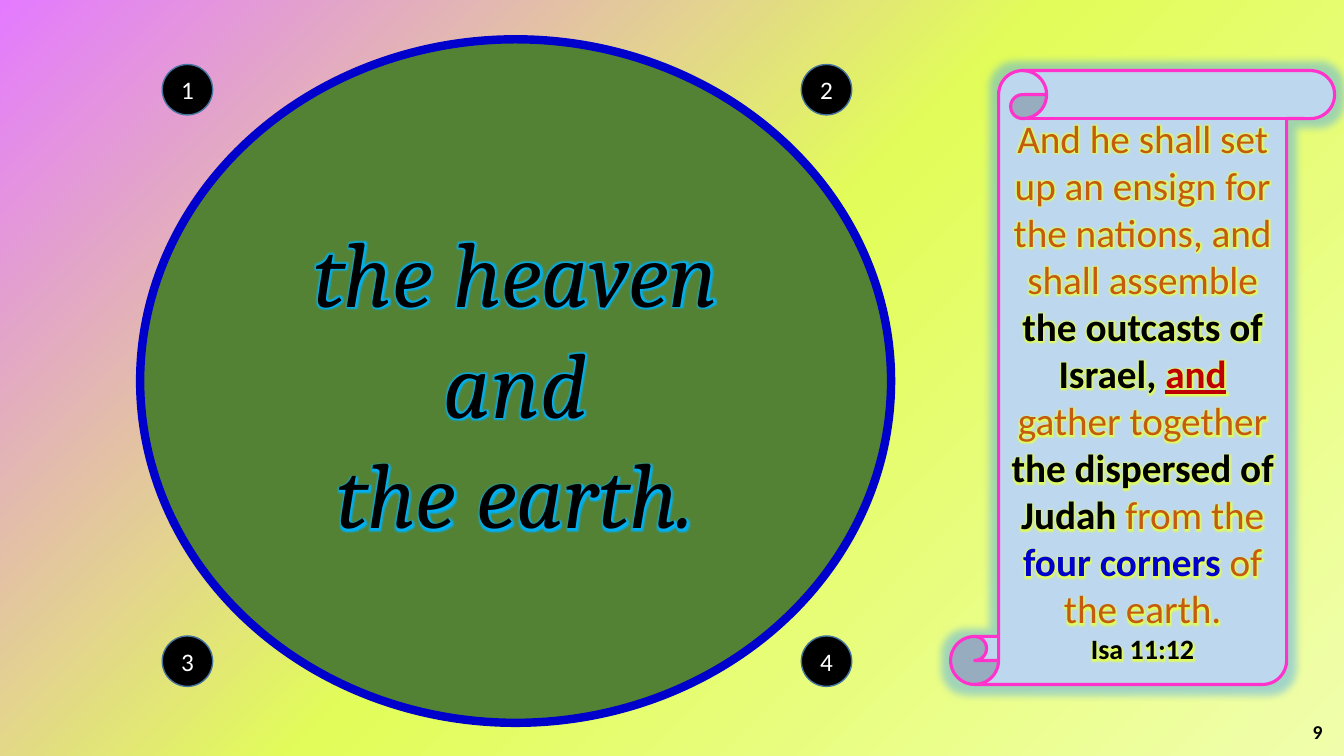
from dataclasses import dataclass

from lxml.etree import SubElement
from pptx import Presentation
from pptx.dml.color import RGBColor
from pptx.enum.shapes import MSO_SHAPE
from pptx.enum.text import MSO_ANCHOR, PP_ALIGN
from pptx.oxml.ns import qn
from pptx.util import Pt

COLORS = {
    "black": "000000", "white": "FFFFFF", "earth": "548235", "blue": "0000CC",
    "marker_edge": "43739E", "parchment": "BDD7EE", "pink": "FF33CC",
    "orange": "C55A11", "red": "C00000", "sky": "00B0F0", "lime": "E2FD59",
    "pale_lime": "F0FEAC", "violet": "E47AFF", "scroll_glow": "3399FF",
}


@dataclass
class Panel:
    preset: MSO_SHAPE
    left: float
    top: float
    width: float
    height: float
    fill: str
    edge: str
    edge_width: float


@dataclass
class Phrase:
    text: str
    size: float
    color: str
    bold: bool = False
    underline: bool = False
    italic: bool = False
    font: str = "Calibri"
    glow: str = ""


def add_color(parent, color: str, alpha: int = 100) -> None:
    tint = SubElement(parent, qn("a:srgbClr"), val=COLORS[color])
    if alpha < 100:
        SubElement(tint, qn("a:alpha"), val=str(alpha * 1000))


def add_glow(properties, color: str, radius: float, alpha: int = 100):
    effects = properties.find(qn("a:effectLst"))
    if effects is None:
        effects = SubElement(properties, qn("a:effectLst"))
    glow = SubElement(effects, qn("a:glow"), rad=str(int(Pt(radius))))
    add_color(glow, color, alpha)
    return effects


def paint_background(slide) -> None:
    slide.background.fill.gradient()
    gradient = slide.element.find(".//" + qn("a:gradFill"))
    for child in list(gradient):
        gradient.remove(child)
    stops = SubElement(gradient, qn("a:gsLst"))
    for position, color, alpha in ((0, "pale_lime", 100), (50, "lime", 100), (100, "violet", 51)):
        stop = SubElement(stops, qn("a:gs"), pos=str(position * 1000))
        add_color(stop, color, alpha)
    circle = SubElement(gradient, qn("a:path"), path="circle")
    SubElement(circle, qn("a:fillToRect"), l="100000", t="100000")


def add_panel(slide, panel: Panel):
    shape = slide.shapes.add_shape(
        panel.preset, Pt(panel.left), Pt(panel.top), Pt(panel.width), Pt(panel.height))
    shape.shadow.inherit = False
    shape.fill.solid()
    shape.fill.fore_color.rgb = RGBColor.from_string(COLORS[panel.fill])
    shape.line.color.rgb = RGBColor.from_string(COLORS[panel.edge])
    shape.line.width = Pt(panel.edge_width)
    return shape


def format_run(run, phrase: Phrase) -> None:
    font = run.font
    font.size = Pt(phrase.size)
    font.bold = phrase.bold
    font.italic = phrase.italic
    font.underline = phrase.underline
    font.color.rgb = RGBColor.from_string(COLORS[phrase.color])
    if phrase.glow:
        add_glow(font.fill._xPr, phrase.glow, 5)
    font.name = phrase.font


def write(shape, paragraphs: list[list[Phrase]], align: PP_ALIGN = PP_ALIGN.CENTER) -> None:
    frame = shape.text_frame
    frame.word_wrap = True
    frame.vertical_anchor = MSO_ANCHOR.MIDDLE
    for index, phrases in enumerate(paragraphs):
        paragraph = frame.add_paragraph() if index else frame.paragraphs[0]
        paragraph.alignment = align
        if len(phrases) == 1:
            paragraph.text = phrases[0].text
            for run in paragraph.runs:
                format_run(run, phrases[0])
            continue
        for phrase in phrases:
            run = paragraph.add_run()
            run.text = phrase.text
            format_run(run, phrase)


def verse(text: str, color: str = "orange", bold: bool = False,
          underline: bool = False, size: float = 28) -> Phrase:
    return Phrase(text, size, color, bold, underline, glow="lime")


def main() -> None:
    deck = Presentation()
    deck.slide_width, deck.slide_height = Pt(960), Pt(540)
    slide = deck.slides.add_slide(deck.slide_layouts[6])
    paint_background(slide)

    # Heaven and earth
    globe = add_panel(slide, Panel(MSO_SHAPE.FLOWCHART_CONNECTOR, 100.1, 28.1, 536.4, 488.2,
                                   "earth", "blue", 6))
    write(globe, [[Phrase("the heaven and\vthe earth.", 66, "black", italic=True,
                          font="Cambria", glow="sky")]])

    # Four corners
    for corner in range(4):
        row, column = divmod(corner, 2)
        marker = add_panel(slide, Panel(
            MSO_SHAPE.FLOWCHART_CONNECTOR, 115.9 + 456.5 * column, 46.1 + 408.2 * row,
            36, 36, "black", "marker_edge", 1))
        write(marker, [[Phrase(str(corner + 1), 18, "white")]])

    # Scroll with the verse
    scroll = add_panel(slide, Panel(MSO_SHAPE.VERTICAL_SCROLL, 679, 50.4, 274.3, 438.5,
                                    "parchment", "pink", 2.25))
    add_glow(scroll.element.spPr, "scroll_glow", 11, 40)
    write(scroll, [
        [verse("And he shall set up an ensign for the nations, and shall assemble "),
         verse("the outcasts of Israel, ", "black", True),
         verse("and", "red", True, True),
         verse(" gather together "),
         verse("the dispersed of Judah ", "black", True),
         verse("from the "),
         verse("four corners ", "blue", True),
         verse("of the earth.")],
        [verse("Isa 11:12", "black", True, size=20)],
    ])

    # Slide number
    page_number = slide.shapes.add_textbox(Pt(735.8), Pt(508.3), Pt(216), Pt(28.8))
    write(page_number, [[Phrase("9", 14, "black", True)]], PP_ALIGN.RIGHT)

    deck.save("out.pptx")


if __name__ == "__main__":
    main()
